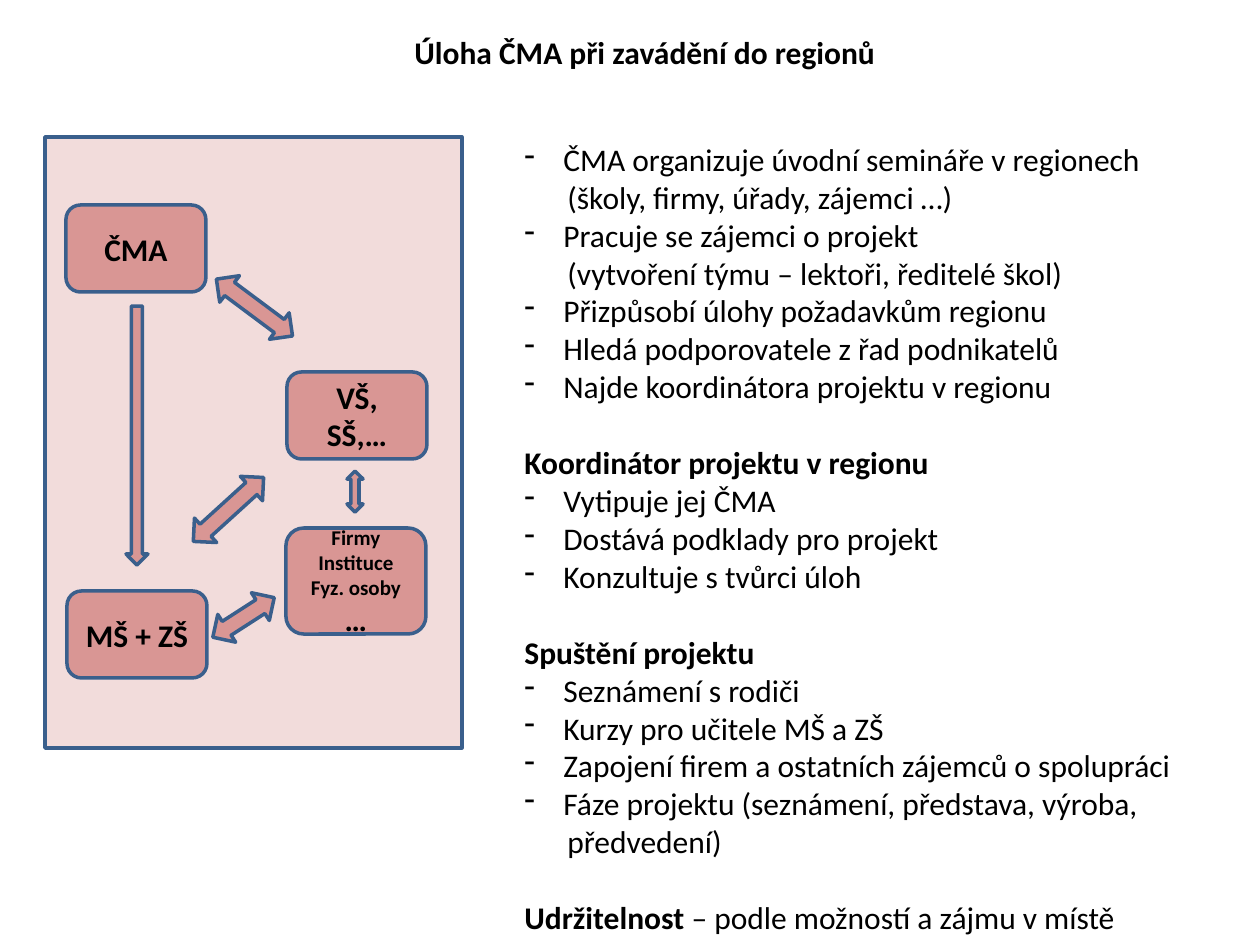
from lxml.etree import SubElement
from pptx import Presentation
from pptx.dml.color import RGBColor
from pptx.enum.shapes import MSO_SHAPE
from pptx.enum.text import MSO_ANCHOR, PP_ALIGN
from pptx.oxml.ns import qn
from pptx.util import Pt

PX = 914400 / 126
BLACK = RGBColor(0x00, 0x00, 0x00)
PINK = RGBColor(0xF2, 0xDC, 0xDB)
ROSE = RGBColor(0xD9, 0x96, 0x94)
BLUE = RGBColor(0x3A, 0x5F, 0x8C)


def emu(px):
    return round(px * PX)


class Canvas:
    font = "Calibri"
    size = 18
    hang = 39   # bullet indent
    inset = 43  # second line below a bullet
    gap = 22    # one line, in points

    def __init__(self, slide):
        self.slide = slide

    def run(self, para, text, bold=False, size=None):
        run = para.add_run()
        run.text = text
        font = run.font
        font.name, font.size, font.bold = self.font, Pt(size or self.size), bold
        font.color.rgb = BLACK

    def shape(self, kind, box, fill=ROSE, turn=0):
        item = self.slide.shapes.add_shape(kind, *map(emu, box))
        item.shadow.inherit = False
        item.fill.solid()
        item.fill.fore_color.rgb = fill
        item.line.color.rgb = BLUE
        item.line.width = Pt(2)
        item.rotation = turn
        return item

    def node(self, box, lines):
        frame = self.shape(MSO_SHAPE.ROUNDED_RECTANGLE, box).text_frame
        frame.word_wrap = True
        frame.vertical_anchor = MSO_ANCHOR.MIDDLE
        for i, (text, size) in enumerate(lines):
            para = frame.paragraphs[0] if i == 0 else frame.add_paragraph()
            para.alignment = PP_ALIGN.CENTER
            self.run(para, text, True, size)

    def frame(self, box, wrap=True):
        frame = self.slide.shapes.add_textbox(*map(emu, box)).text_frame
        frame.word_wrap = wrap
        return frame

    def title(self, box, text):
        self.run(self.frame(box, False).paragraphs[0], text, True)

    def outline(self, box, rows):
        frame = self.frame(box)
        for i, (kind, text) in enumerate(rows):
            para = frame.paragraphs[0] if i == 0 else frame.add_paragraph()
            props = para._p.get_or_add_pPr()
            if kind == "item":
                props.set("marL", str(emu(self.hang)))
                props.set("indent", str(-emu(self.hang)))
                SubElement(props, qn("a:buFontTx"))
                SubElement(props, qn("a:buChar"), char="-")
            elif kind == "more":
                props.set("marL", str(emu(self.inset)))
            else:
                para.space_before = Pt(self.gap)
            head, dash, rest = text.partition("– ") if kind == "head" else (text, "", "")
            self.run(para, head, kind == "head")
            if rest:
                self.run(para, dash + rest)


ROWS = [
    ("item", "ČMA organizuje úvodní semináře v regionech"),
    ("more", "(školy, firmy, úřady, zájemci …)"),
    ("item", "Pracuje se zájemci o projekt"),
    ("more", "(vytvoření týmu – lektoři, ředitelé škol)"),
    ("item", "Přizpůsobí úlohy požadavkům regionu"),
    ("item", "Hledá podporovatele z řad podnikatelů"),
    ("item", "Najde koordinátora projektu v regionu"),
    ("head", "Koordinátor projektu v regionu"),
    ("item", "Vytipuje jej ČMA"),
    ("item", "Dostává podklady pro projekt"),
    ("item", "Konzultuje s tvůrci úloh"),
    ("head", "Spuštění projektu"),
    ("item", "Seznámení s rodiči"),
    ("item", "Kurzy pro učitele MŠ a ZŠ"),
    ("item", "Zapojení firem a ostatních zájemců o spolupráci"),
    ("item", "Fáze projektu (seznámení, představa, výroba,"),
    ("more", "předvedení)"),
    ("head", "Udržitelnost – podle možností a zájmu v místě"),
]

NODES = [
    ((67, 591, 140, 87), [("MŠ + ZŠ", 18)]),
    ((66, 205, 140, 87), [("ČMA", 18)]),
    ((287, 372, 140, 87), [("VŠ, SŠ,…", 18)]),
    ((286, 528, 140, 106),
     [("Firmy", 12), ("Instituce", 12), ("Fyz. osoby", 12), ("…", 18)]),
]

# Two-way arrows: box and rotation
LINKS = [
    ((238, 260, 33, 95), 306.7),
    ((212, 462, 33, 95), 47.7),
    ((347, 471, 16, 41), 0),
    ((227, 581, 33, 73), 57.2),
]


def main():
    deck = Presentation()
    deck.slide_width, deck.slide_height = emu(1260), emu(945)
    page = Canvas(deck.slides.add_slide(deck.slide_layouts[6]))

    # Diagram
    page.shape(MSO_SHAPE.RECTANGLE, (45, 137, 417, 611), PINK)
    for box, lines in NODES:
        page.node(box, lines)
    page.shape(MSO_SHAPE.DOWN_ARROW, (126, 306, 22, 259))
    for box, turn in LINKS:
        page.shape(MSO_SHAPE.UP_DOWN_ARROW, box, turn=turn)

    # Text
    page.outline((512, 134, 674, 811), ROWS)
    page.title((402, 27, 498, 50), "Úloha ČMA při zavádění do regionů")
    deck.save("out.pptx")


if __name__ == "__main__":
    main()
